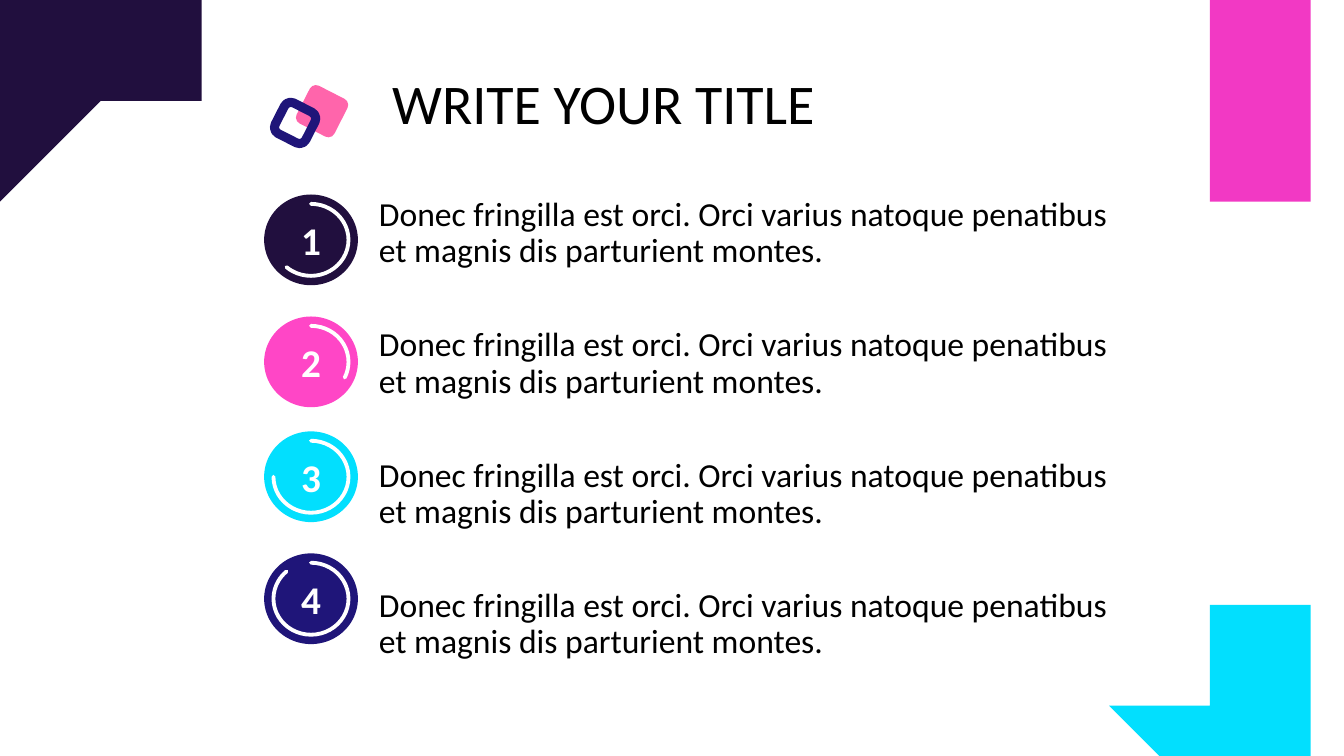
from dataclasses import dataclass

from pptx import Presentation
from pptx import util as u
from pptx.dml.color import RGBColor
from pptx.enum import shapes, text
from pptx.oxml.ns import qn

WIDE, HIGH = 13.33, 7.5
KIND = shapes.MSO_SHAPE
ALIGN = text.PP_ALIGN
ANCHOR = text.MSO_ANCHOR


@dataclass(frozen=True)
class Theme:
    font: str = "Calibri"
    ink: str = "000000"
    white: str = "FFFFFF"
    plum: str = "210F3E"
    magenta: str = "F239C4"
    pink: str = "FF46C6"
    rose: str = "FF65AB"
    cyan: str = "02DFFE"
    navy: str = "1F1579"
    title: int = 40
    badge: int = 28
    body: int = 24


T = Theme()
WORDS = ("Donec fringilla est orci. Orci varius natoque penatibus "
         "et magnis dis parturient montes.")

# Badge top, colour, and the angle where its arc ends
STEPS = [
    (1.93, T.plum, 132),
    (3.14, T.pink, 25),
    (4.28, T.cyan, 180),
    (5.49, T.navy, 228),
]

# Corner outlines: pairs are straight, sixes are cubic curves
CORNERS = [
    (T.magenta, [(11.61, 0), (12.08, 1.43),
                 (12.14, 1.62, 12.25, 1.75, 12.42, 1.83),
                 (12.59, 1.92, 12.77, 1.93, 12.95, 1.88),
                 (WIDE, 1.75), (WIDE, 0)]),
    (T.plum, [(0, 0), (1.71, 0), (1.85, 0.42),
              (1.91, 0.6, 1.89, 0.78, 1.81, 0.95),
              (1.72, 1.12, 1.58, 1.24, 1.4, 1.29), (0, 1.75)]),
    (T.cyan, [(WIDE, 5.78), (WIDE, HIGH), (11.61, HIGH), (11.48, 7.12),
              (11.42, 6.93, 11.44, 6.76, 11.52, 6.59),
              (11.61, 6.42, 11.74, 6.3, 11.93, 6.25)]),
]


def paint(shape, fill=None, line=None, width=0):
    """Set fill and line; None leaves either one empty."""
    shape.shadow.inherit = False
    for part, tone in ((shape.fill, fill), (shape.line.fill, line)):
        if tone:
            part.solid()
            part.fore_color.rgb = RGBColor.from_string(tone)
        else:
            part.background()
    if line:
        shape.line.width = u.Pt(width)


def place(slide, kind, box):
    return slide.shapes.add_shape(kind, *map(u.Inches, box))


def write(shape, words, size, tone, bold=False, para=None, frame=None):
    """Put one formatted paragraph into a shape."""
    body = shape.text_frame
    body.text = words
    line = body.paragraphs[0]
    font = line.runs[0].font
    font.color.rgb = RGBColor.from_string(tone)
    formats = (
        (body, {"word_wrap": True, "auto_size": text.MSO_AUTO_SIZE.NONE,
                **(frame or {})}),
        (line, para or {}),
        (font, {"name": T.font, "size": u.Pt(size), "bold": bold}),
    )
    for item, values in formats:
        for name, value in values.items():
            setattr(item, name, value)


def trace(points, steps=16):
    """Turn lines and cubic curves into a list of points."""
    out = []
    for point in points:
        if len(point) == 2:
            out.append(point)
            continue
        start = out[-1]
        for k in range(1, steps + 1):
            t = k / steps
            share = ((1 - t) ** 3, 3 * t * (1 - t) ** 2,
                     3 * t * t * (1 - t), t ** 3)
            out.append(tuple(
                sum(a * b for a, b in zip(share, (start[i], *point[i::2])))
                for i in (0, 1)))
    return out


def corner(slide, tone, outline):
    first, *rest = trace(outline)
    pen = slide.shapes.build_freeform(*first, scale=u.Inches(1))
    pen.add_line_segments(rest, close=True)
    paint(pen.convert_to_shape(), tone)


PROSE = {"line_spacing": 0.9, "space_before": u.Pt(10),
         "alignment": ALIGN.LEFT}


def heading(slide, box):
    title = slide.shapes.title
    for name, value in zip(("left", "top", "width", "height"), box):
        setattr(title, name, u.Inches(value))
    write(title, "WRITE YOUR TITLE", T.title, T.ink, para=PROSE,
          frame={"vertical_anchor": ANCHOR.TOP})


def emblem(slide, box):
    """Two tilted squares, one solid and one hollow."""
    x, y, wide, high = box
    tiles = (
        (0.66, 0.42, 0.42, 0.16, {"fill": T.rose}),
        (0.33, 0.6, 0.34, 0.2, {"line": T.navy, "width": 6.5}),
    )
    for across, down, side, curve, look in tiles:
        tile = place(slide, KIND.ROUNDED_RECTANGLE,
                     (x + across * wide - side / 2,
                      y + down * high - side / 2, side, side))
        tile.adjustments[0] = curve
        tile.rotation = 27
        paint(tile, **look)


def badge(slide, box, label, tone, end):
    """Numbered disc with a white progress arc."""
    x, y, wide, high = box
    disc = place(slide, KIND.OVAL, box)
    paint(disc, tone)
    write(disc, label, T.badge, T.white, True,
          {"alignment": ALIGN.CENTER}, {"vertical_anchor": ANCHOR.MIDDLE})
    inset = 0.1 * wide
    arc = place(slide, KIND.ARC, (x + inset, y + inset,
                                  wide - 2 * inset, high - 2 * inset))
    # Angles are held in 60000ths of a degree, adjustments in 100000ths
    for k, angle in enumerate((270, end)):
        arc.adjustments[k] = angle * 0.6
    paint(arc, line=T.white, width=2.75)
    arc.line._get_or_add_ln().set("cap", "rnd")


def steps(slide, box):
    """Badges on the left, evenly spaced texts on the right."""
    x, y, wide, high = box
    pitch = high / len(STEPS)
    indent = 1.04
    for k, (top, tone, end) in enumerate(STEPS):
        badge(slide, (x, top, 0.93, 0.9), str(k + 1), tone, end)
        note = slide.shapes.add_textbox(*map(u.Inches, (
            x + indent, y + k * pitch, wide - indent, 0.88)))
        write(note, WORDS, T.body, T.ink, para=PROSE,
              frame={"vertical_anchor": ANCHOR.TOP})


def main():
    deck = Presentation()
    deck.slide_width, deck.slide_height = u.Inches(WIDE), u.Inches(HIGH)
    slide = deck.slides.add_slide(deck.slide_layouts[5])
    for tone, outline in CORNERS:
        corner(slide, tone, outline)
    steps(slide, (2.62, 1.91, 8.57, 5.17))
    heading(slide, (3.79, 0.71, 6.92, 0.87))
    emblem(slide, (2.66, 0.83, 0.81, 0.65))
    deck.save("out.pptx")


if __name__ == "__main__":
    main()
